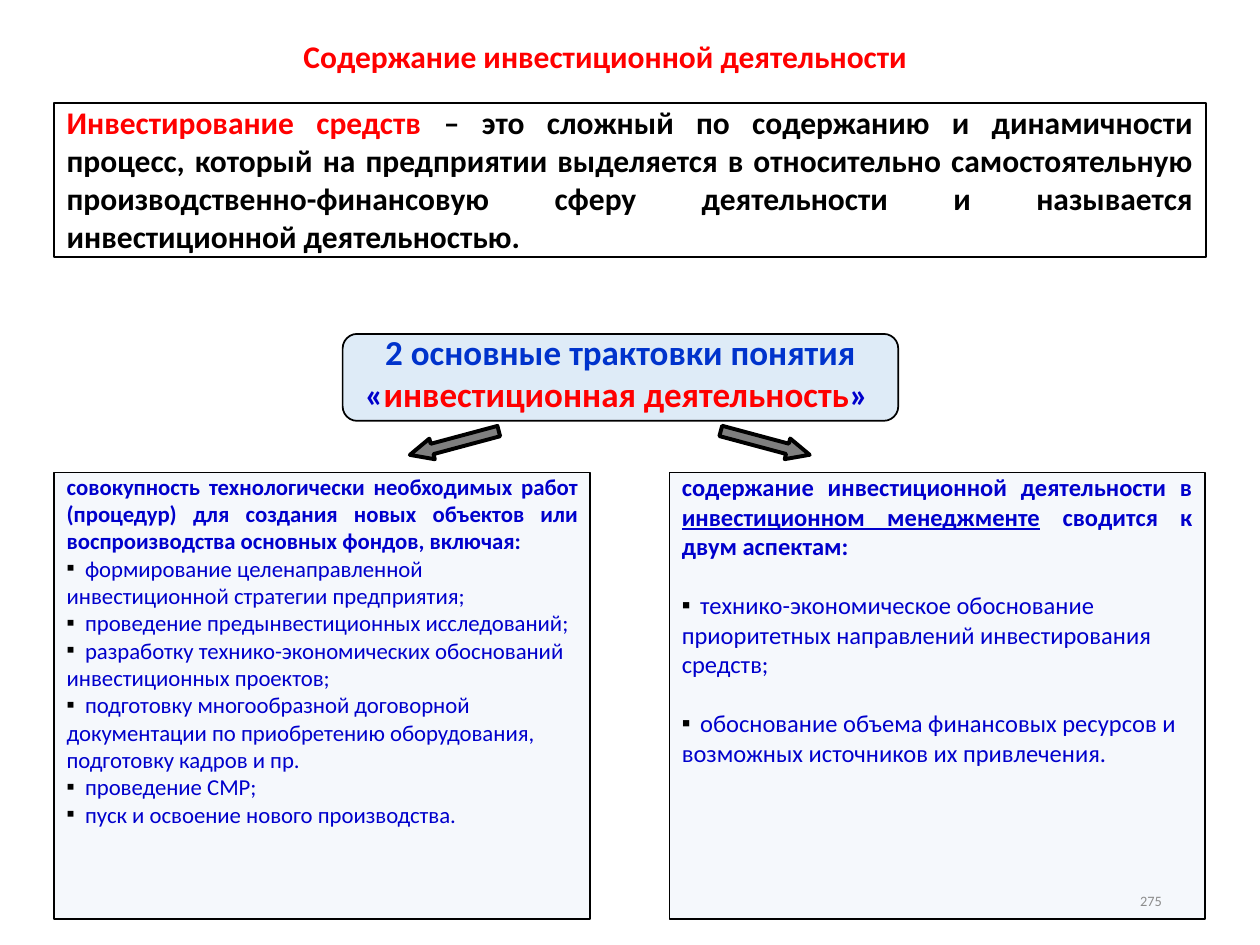
from lxml.etree import SubElement
from pptx import Presentation
from pptx.dml.color import RGBColor
from pptx.enum.shapes import MSO_SHAPE as Shape
from pptx.enum.text import MSO_ANCHOR as Anchor, PP_ALIGN as Align
from pptx.oxml.ns import qn
from pptx.util import Pt

RED = RGBColor(0xFF, 0x00, 0x00)
BLACK = RGBColor(0x00, 0x00, 0x00)
WHITE = RGBColor(0xFF, 0xFF, 0xFF)
GRAY = RGBColor(0x8C, 0x8C, 0x8C)
NAVY = RGBColor(0x00, 0x00, 0xCC)
ROYAL = RGBColor(0x00, 0x33, 0xCC)
PALE = RGBColor(0xDE, 0xEB, 0xF7)

WORKS = [
    "формирование целенаправленной инвестиционной стратегии предприятия;",
    "проведение предынвестиционных исследований;",
    "разработку технико-экономических обоснований инвестиционных проектов;",
    "подготовку многообразной договорной документации по приобретению оборудования, "
    "подготовку кадров и пр.",
    "проведение СМР;",
    "пуск и освоение нового производства.",
]
ASPECTS = [
    "технико-экономическое обоснование приоритетных направлений инвестирования средств;",
    "обоснование объема финансовых ресурсов и возможных источников их привлечения.",
]


class SlideBuilder:
    """Draws styled elements on the current slide, with lengths in points."""

    font = "Calibri"

    def __init__(self, page):
        self.page = page

    def shape(self, kind, frame, fill, opacity=100, line=1):
        shape = self.page.shapes.add_shape(kind, *map(Pt, frame))
        shape.shadow.inherit = False
        shape.fill.solid()
        shape.fill.fore_color.rgb = fill
        if opacity < 100:
            solid = shape._element.spPr.find(qn("a:solidFill"))
            color = solid.find(qn("a:srgbClr"))
            SubElement(color, qn("a:alpha"), val=str(opacity * 1000))
        shape.line.color.rgb = BLACK
        shape.line.width = Pt(line)
        return shape

    def panel(self, frame, fill):
        box = self.shape(Shape.RECTANGLE, frame, fill, opacity=30)
        text = box.text_frame
        text.word_wrap = True
        text.vertical_anchor = Anchor.TOP
        text.margin_top = text.margin_bottom = 0
        return text

    def label(self, frame):
        text = self.page.shapes.add_textbox(*map(Pt, frame)).text_frame
        text.word_wrap = True
        text.vertical_anchor = Anchor.MIDDLE
        return text

    def arrow(self, left, rotation):
        arrow = self.shape(Shape.RIGHT_ARROW, (left, 247, 52.6, 12.2), BLACK, 50, 2.25)
        arrow.adjustments[0] = 0.5
        arrow.adjustments[1] = 1.08
        arrow.rotation = rotation

    def add_spans(self, para, spans, size, align=Align.LEFT, bold=True):
        para.alignment = align
        for words, color in spans:
            span = para.add_run()
            span.text = words
            span.font.name = self.font
            span.font.size = Pt(size)
            span.font.bold = bold
            span.font.color.rgb = color

    def bullets(self, text, items, size, gap=0):
        for item in items:
            para = text.add_paragraph()
            self.add_spans(para, [("\t" + item, NAVY)], size, bold=False)
            para.space_before = Pt(gap)
            props = para._p.get_or_add_pPr()
            props.set("marL", "0")
            props.set("indent", "0")
            SubElement(SubElement(props, qn("a:buClr")), qn("a:srgbClr"), val=str(BLACK))
            SubElement(props, qn("a:buFont"), typeface=self.font)
            SubElement(props, qn("a:buChar"), char="▪")
            stops = SubElement(props, qn("a:tabLst"))
            SubElement(stops, qn("a:tab"), pos=str(Pt(10.5)), algn="l")


def main():
    deck = Presentation()
    deck.slide_width, deck.slide_height = Pt(720), Pt(540)
    slide = SlideBuilder(deck.slides.add_slide(deck.slide_layouts[6]))

    slide.shape(Shape.ROUNDED_RECTANGLE, (195.8, 190.8, 317.5, 49.7), PALE)

    title = slide.label((14.4, 13.7, 663, 36))
    slide.add_spans(title.paragraphs[0], [("Содержание инвестиционной деятельности", RED)],
                    18, Align.CENTER)

    definition = slide.panel((31, 59, 658, 87.8), WHITE)
    slide.add_spans(definition.paragraphs[0], [
        ("Инвестирование средств ", RED),
        ("– это сложный по содержанию и динамичности процесс, который на предприятии "
         "выделяется в относительно самостоятельную производственно-финансовую сферу "
         "деятельности и называется инвестиционной деятельностью.", BLACK),
    ], 18, Align.JUSTIFY)

    concept = slide.label((144.7, 185, 419.8, 55.4))
    slide.add_spans(concept.paragraphs[0], [
        ("2 основные трактовки понятия ", ROYAL),
        ("«", NAVY),
        ("инвестиционная деятельность", RED),
        ("» ", NAVY),
    ], 20, Align.CENTER)

    for left, rotation in ((411, 15), (233.3, 165)):
        slide.arrow(left, rotation)

    works = slide.panel((31, 270, 306, 255), PALE)
    slide.add_spans(works.paragraphs[0], [
        ("совокупность технологически необходимых работ (процедур) для создания новых "
         "объектов или воспроизводства основных фондов, включая:", NAVY),
    ], 13, Align.JUSTIFY)
    slide.bullets(works, WORKS, 13)

    aspects = slide.panel((382.5, 270, 306, 255), PALE)
    intro = aspects.paragraphs[0]
    slide.add_spans(intro, [
        ("содержание инвестиционной деятельности в ", NAVY),
        ("инвестиционном менеджменте", NAVY),
        (" сводится к двум аспектам:", NAVY),
    ], 14, Align.JUSTIFY)
    intro.runs[1].font.underline = True
    slide.bullets(aspects, ASPECTS, 14, gap=17)

    number = slide.label((509, 500.4, 162, 28.8))
    slide.add_spans(number.paragraphs[0], [("275", GRAY)], 8.2, Align.RIGHT, bold=False)

    deck.save("out.pptx")


if __name__ == "__main__":
    main()
